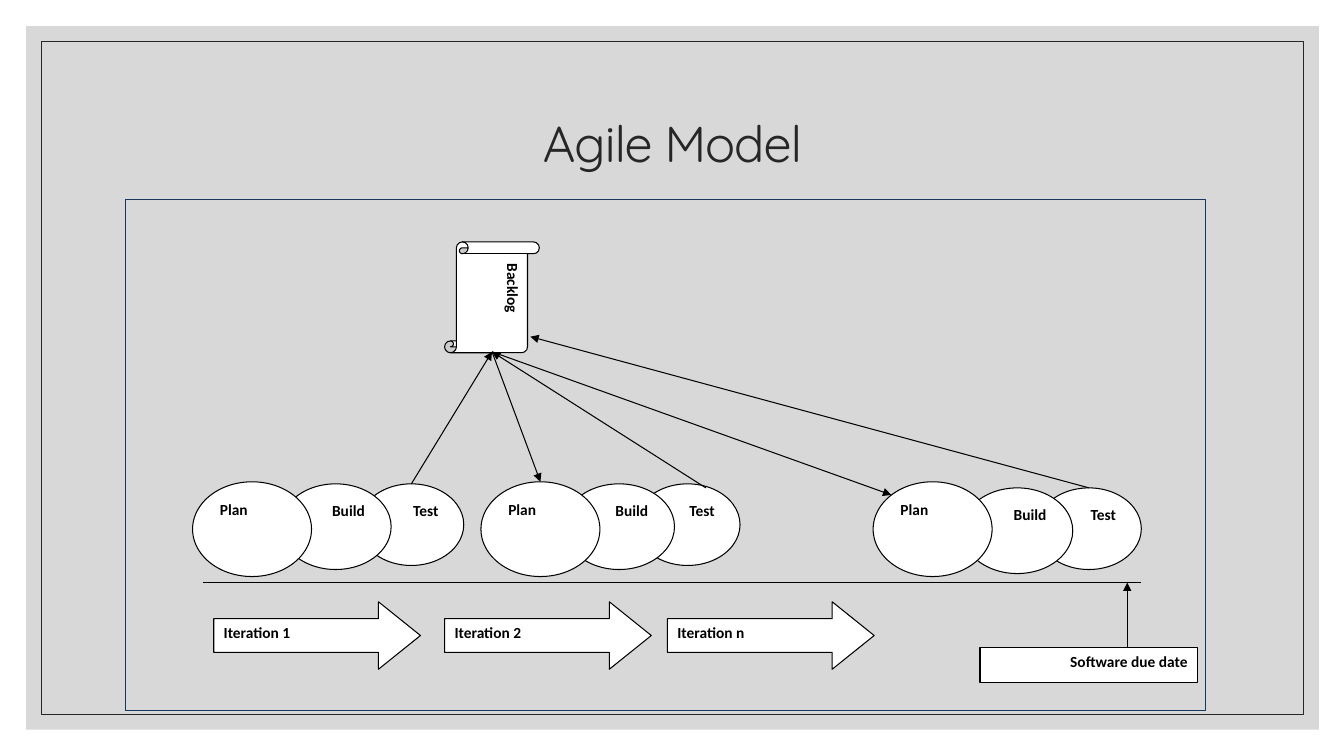
from pptx import Presentation
from pptx.dml.color import RGBColor
from pptx.enum import shapes, text
from pptx.oxml import ns, xmlchemy
from pptx.util import Inches, Pt

PRESET = shapes.MSO_SHAPE
ALIGN = text.PP_ALIGN
ANCHOR = text.MSO_ANCHOR
BLACK, WHITE, DARK = "000000", "FFFFFF", "262626"
LABEL_FONT = {"name": "Calibri", "size": Pt(11), "bold": True}
TITLE_FONT = {"name": "Quicksand", "size": Pt(36), "bold": False}


def rgb(hex_color):
    return RGBColor.from_string(hex_color)


def add_xml(parent, tag, **attributes):
    child = xmlchemy.OxmlElement(tag)
    for name, value in attributes.items():
        child.set(name, value)
    parent.append(child)
    return child


def style_run(run, font_values, color):
    for name, value in font_values.items():
        setattr(run.font, name, value)
    run.font.color.rgb = rgb(color)


def add_box(slide, preset, box, fill=None, line=BLACK, width=0.75):
    shape = slide.shapes.add_shape(preset, *map(Inches, box))
    shape.shadow.inherit = False
    if fill:
        shape.fill.solid()
        shape.fill.fore_color.rgb = rgb(fill)
    else:
        shape.fill.background()
    if line:
        shape.line.color.rgb = rgb(line)
        shape.line.width = Pt(width)
    else:
        shape.line.fill.background()
    return shape


def add_label(slide, preset, box, label, align=ALIGN.LEFT):
    shape = add_box(slide, preset, box, WHITE)
    frame = shape.text_frame
    frame.word_wrap = True
    frame.vertical_anchor = ANCHOR.TOP
    paragraph = frame.paragraphs[0]
    paragraph.alignment = align
    run = paragraph.add_run()
    run.text = label
    style_run(run, LABEL_FONT, BLACK)
    return shape


def add_line(slide, start, end, arrow=True):
    line = slide.shapes.add_connector(
        shapes.MSO_CONNECTOR.STRAIGHT, *map(Inches, (*start, *end)))
    line.line.color.rgb = rgb(BLACK)
    line.line.width = Pt(0.75)
    if arrow:
        add_xml(line.line._get_or_add_ln(), "a:tailEnd", type="triangle")
    add_xml(line.element.spPr, "a:effectLst")


def add_backdrop(slide):
    panel = add_box(slide, PRESET.RECTANGLE, (0.26, 0.26, 12.82, 6.98), "BFBFBF", None)
    panel_color = panel.element.spPr.find(".//" + ns.qn("a:srgbClr"))
    add_xml(panel_color, "a:alpha", val="60000")
    add_box(slide, PRESET.RECTANGLE, (0.41, 0.41, 12.52, 6.68), None, DARK, 0.5)


def set_title(slide, wording):
    title = slide.shapes.title
    # Bring the title in front of the backdrop
    title.element.getparent().append(title.element)
    place = {"left": 1.17, "top": 0.7, "width": 11, "height": 1.5}
    for name, value in place.items():
        setattr(title, name, Inches(value))
    frame = title.text_frame
    frame.auto_size = text.MSO_AUTO_SIZE.NONE
    frame.vertical_anchor = ANCHOR.MIDDLE
    paragraph = frame.paragraphs[0]
    paragraph.alignment = ALIGN.CENTER
    paragraph.line_spacing = 0.9
    run = paragraph.add_run()
    run.text = wording
    style_run(run, TITLE_FONT, DARK)
    run.font._element.set("spc", "-70")


def add_cycle(slide, plan_left, build_left, test_left, top):
    """Three overlapping phases, with Plan in front."""
    phases = [
        ("Test", (test_left, top, 1.04, 0.81), ALIGN.RIGHT),
        ("Build", (build_left, top, 1.1, 0.85), ALIGN.RIGHT),
        ("Plan", (plan_left, 4.78, 1.18, 0.94), ALIGN.LEFT),
    ]
    for phase, box, align in phases:
        add_label(slide, PRESET.OVAL, box, phase, align)


def add_backlog(slide):
    backlog = add_label(slide, PRESET.VERTICAL_SCROLL, (4.41, 2.4, 0.94, 1.1), "Backlog")
    backlog.element.find(".//" + ns.qn("a:bodyPr")).set("vert", "eaVert")


def add_iteration(slide, left, label):
    arrow = add_label(slide, PRESET.RIGHT_ARROW, (left, 5.97, 2.05, 0.67), label)
    arrow.adjustments[1] = 0.622


def main():
    deck = Presentation()
    deck.slide_width, deck.slide_height = Inches(13.33), Inches(7.5)
    slide = deck.slides.add_slide(deck.slide_layouts[5])

    # Backdrop, title and diagram frame
    add_backdrop(slide)
    set_title(slide, "Agile Model")
    add_box(slide, PRESET.RECTANGLE, (1.24, 1.98, 10.72, 5.07), line="17365D")

    # Timeline with its cycles and iterations
    add_line(slide, (2.01, 5.78), (11.32, 5.78), arrow=False)
    for cycle in [(1.91, 2.78, 3.56, 4.8), (4.77, 5.59, 6.3, 4.8), (8.66, 9.54, 10.28, 4.84)]:
        add_cycle(slide, *cycle)
    for left, number in [(2.12, "1"), (4.41, "2"), (6.62, "n")]:
        add_iteration(slide, left, f"Iteration {number}")

    # Backlog and its flows to and from the cycles
    add_backlog(slide)
    backlog_foot = (4.88, 3.49)
    for plan in [(5.36, 4.78), (8.84, 4.91)]:
        add_line(slide, backlog_foot, plan)
    for test in [(4.08, 4.8), (7, 4.84)]:
        add_line(slide, test, backlog_foot)
    add_line(slide, (10.8, 4.84), (5.26, 3.34))

    # Due date
    add_label(slide, PRESET.RECTANGLE, (9.72, 6.42, 2.16, 0.35), "Software due date", ALIGN.RIGHT)
    add_line(slide, (11.18, 6.42), (11.18, 5.78))

    deck.save("out.pptx")


if __name__ == "__main__":
    main()
